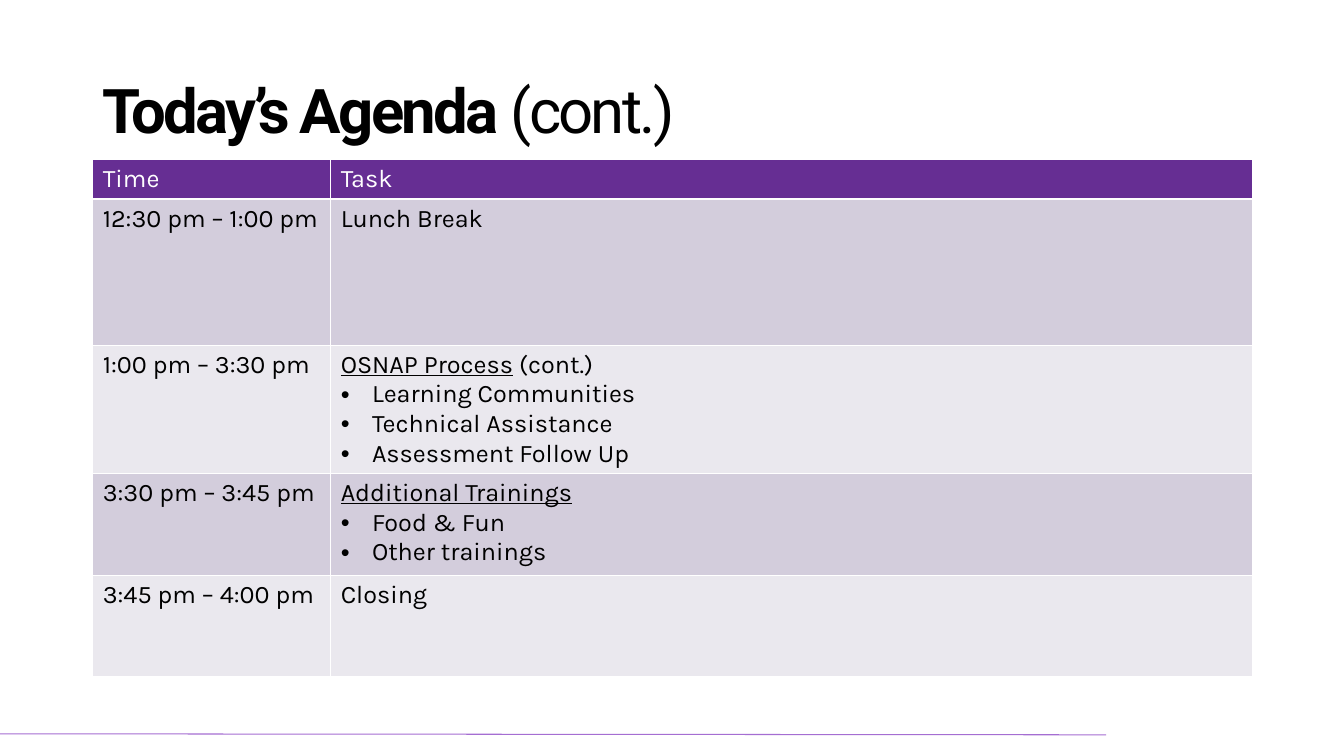
from lxml import etree
from pptx import Presentation
from pptx.dml.color import RGBColor
from pptx.enum.shapes import MSO_CONNECTOR
from pptx.enum.text import MSO_ANCHOR
from pptx.oxml.ns import qn
from pptx.util import Inches, Pt

STRAIGHT = MSO_CONNECTOR.STRAIGHT
MIDDLE = MSO_ANCHOR.MIDDLE
BLACK = RGBColor(0x00, 0x00, 0x00)
WHITE = RGBColor(0xFF, 0xFF, 0xFF)
PURPLE = RGBColor(0x66, 0x2E, 0x93)
LILAC = RGBColor(0xA5, 0x6E, 0xD2)
BANDS = (RGBColor(0xEA, 0xE8, 0xEE), RGBColor(0xD3, 0xCD, 0xDC))

TITLE = (("Today’s Agenda ", True), ("(cont.)", False))
HEADER = ("Time", "Task")
AGENDA = [
    {"time": "12:30 pm – 1:00 pm", "task": "Lunch Break"},
    {"time": "1:00 pm – 3:30 pm", "topic": "OSNAP Process", "task": " (cont.)",
     "points": ("Learning Communities", "Technical Assistance", "Assessment Follow Up")},
    {"time": "3:30 pm – 3:45 pm", "topic": "Additional Trainings",
     "points": ("Food & Fun", "Other trainings")},
    {"time": "3:45 pm – 4:00 pm", "task": "Closing"},
]
COLUMN_WIDTHS = (2.36, 9.14)
ROW_HEIGHTS = (0.29, 1.45, 1.23, 1.01, 1.01)
LEFT, WIDTH = 0.92, 11.5


def add_run(paragraph, text, font_name, size, color, bold=False, underline=False):
    run = paragraph.add_run()
    run.text = text
    font = run.font
    font.name, font.size, font.bold, font.underline = font_name, Pt(size), bold, underline
    font.color.rgb = color
    return run


def add_bullet(paragraph):
    properties = paragraph._p.get_or_add_pPr()
    properties.set("marL", str(Inches(0.31)))
    properties.set("indent", str(Inches(-0.31)))
    etree.SubElement(properties, qn("a:buFont")).set("typeface", "Arial")
    etree.SubElement(properties, qn("a:buChar")).set("char", "•")


def style_cell(cell, fill):
    properties = cell._tc.get_or_add_tcPr()
    for side in ("lnL", "lnR", "lnT", "lnB"):
        border = etree.SubElement(properties, qn(f"a:{side}"), w=str(Pt(1)))
        border_fill = etree.SubElement(border, qn("a:solidFill"))
        etree.SubElement(border_fill, qn("a:srgbClr"), val=str(WHITE))
    cell.fill.solid()
    cell.fill.fore_color.rgb = fill


def add_footer_line(slide):
    line = slide.shapes.add_connector(
        STRAIGHT, Inches(10.97), Inches(7.29), Inches(0), Inches(7.28))
    line.line.color.rgb = LILAC
    line.line.width = Pt(0.75)
    etree.SubElement(line._element.spPr, qn("a:effectLst"))


def add_title(slide):
    box = slide.shapes.add_textbox(Inches(LEFT), Inches(0.4), Inches(WIDTH), Inches(1.45))
    frame = box.text_frame
    frame.word_wrap = True
    frame.vertical_anchor = MIDDLE
    paragraph = frame.paragraphs[0]
    paragraph.line_spacing = 0.9
    for text, bold in TITLE:
        run = add_run(paragraph, text, "Roboto", 44, BLACK, bold)
        run.font._element.set("spc", "-200")


def add_agenda(slide):
    table = slide.shapes.add_table(
        len(ROW_HEIGHTS), len(COLUMN_WIDTHS), Inches(LEFT), Inches(1.58),
        Inches(WIDTH), Inches(sum(ROW_HEIGHTS))).table
    for column, width in zip(table.columns, COLUMN_WIDTHS):
        column.width = Inches(width)
    for row, height in zip(table.rows, ROW_HEIGHTS):
        row.height = Inches(height)
    for cell, heading in zip(table.rows[0].cells, HEADER):
        style_cell(cell, PURPLE)
        add_run(cell.text_frame.paragraphs[0], heading, "Karla", 18, WHITE)
    for number, item in enumerate(AGENDA, start=1):
        time_cell, task_cell = table.rows[number].cells
        for cell in (time_cell, task_cell):
            style_cell(cell, BANDS[number % 2])
        add_run(time_cell.text_frame.paragraphs[0], item["time"], "Karla", 18, BLACK)
        frame = task_cell.text_frame
        for key in ("topic", "task"):
            if key in item:
                add_run(frame.paragraphs[0], item[key], "Karla", 18, BLACK,
                        underline=key == "topic")
        for point in item.get("points", ()):
            paragraph = frame.add_paragraph()
            add_bullet(paragraph)
            add_run(paragraph, point, "Karla", 18, BLACK)


def main():
    presentation = Presentation()
    presentation.slide_width = Inches(13.33)
    presentation.slide_height = Inches(7.5)
    slide = presentation.slides.add_slide(presentation.slide_layouts[6])
    add_footer_line(slide)
    add_agenda(slide)
    add_title(slide)
    presentation.save("out.pptx")


if __name__ == "__main__":
    main()
